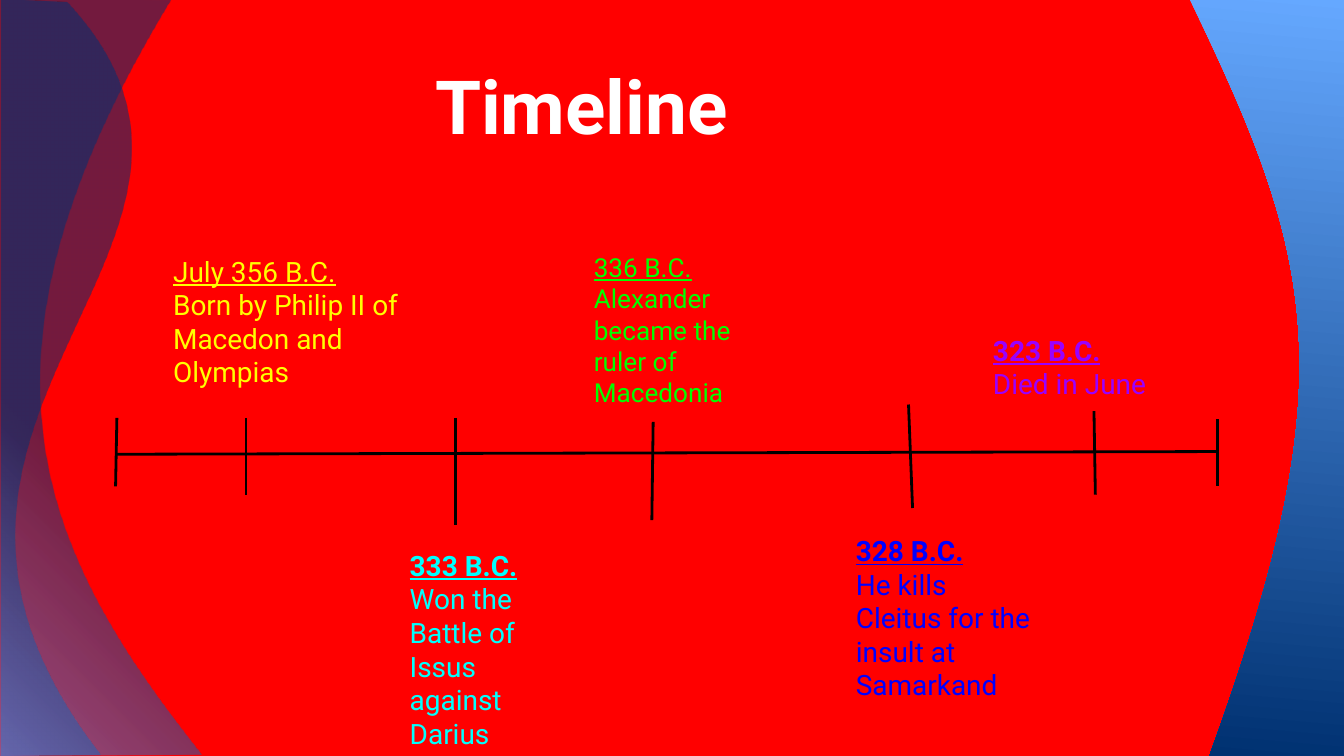
import dataclasses

import pptx
import pptx.dml.color
import pptx.enum.shapes
import pptx.enum.text
import pptx.oxml
import pptx.oxml.ns
import pptx.util
from pptx.util import Inches

Point = tuple[float, float]


@dataclasses.dataclass
class Wave:
    """A start, then steps: one point is a line, three are a curve."""
    start: Point
    steps: list[list[Point]]
    fill: str


@dataclasses.dataclass
class Event:
    left: float
    top: float
    width: float
    height: float
    date: str
    note: str
    color: str
    size: int = 15
    bold: bool = True


@dataclasses.dataclass
class Stroke:
    x1: float
    y1: float
    x2: float
    y2: float


def stop(place: int, color: str, alpha: int = 100) -> str:
    return (f'<a:gs pos="{place * 1000}"><a:srgbClr val="{color}">'
            f'<a:alpha val="{alpha * 1000}"/></a:srgbClr></a:gs>')


def blend(stops: list[str], shade: str) -> str:
    """Gradient fill as XML."""
    space = pptx.oxml.ns.nsdecls("a")
    return (f'<a:gradFill {space} rotWithShape="1"><a:gsLst>{"".join(stops)}'
            f'</a:gsLst>{shade}</a:gradFill>')


GLOW = blend(
    [stop(0, "549FFF", 54), stop(41, "003171", 54), stop(100, "003171", 54)],
    '<a:path path="circle"><a:fillToRect t="100000" r="100000"/></a:path>')
SKY = blend([stop(0, "65A8FF"), stop(100, "003171")],
            '<a:lin ang="5700000" scaled="0"/>')

WAVES = [
    Wave((1.5, 5.61), [[(-0.01, 5.62)],
                       [(-0.01, 3.74), (0, 1.86), (0, -0.02)],
                       [(1.27, 0)],
                       [(-0.38, 2.72), (0.33, 4.13), (1.5, 5.61)]], GLOW),
    Wave((0.75, 5.61), [[(0.01, 5.62)],
                        [(0.01, 3.75), (0.01, 1.88), (0.01, 0)],
                        [(0.5, 0.02)],
                        [(2.17, 1.82), (-1.22, 3.08), (0.75, 5.61)]], GLOW),
    Wave((10.05, 5.62), [[(9, 5.62)],
                         [(10.01, 2.84), (9.81, 1.96), (8.85, -0.01)],
                         [(10.05, -0.01)]], SKY),
]
STROKES = [
    Stroke(0.87, 3.38, 9.06, 3.36),
    Stroke(0.87, 3.11, 0.86, 3.62),
    Stroke(1.83, 3.11, 1.83, 3.68),
    Stroke(3.39, 3.11, 3.39, 3.91),
    Stroke(4.85, 3.87, 4.86, 3.14),
    Stroke(6.76, 3.01, 6.79, 3.78),
    Stroke(8.14, 3.06, 8.15, 3.68),
    Stroke(9.06, 3.12, 9.06, 3.62),
]
EVENTS = [
    Event(1.19, 1.79, 2.37, 1.21, "July 356 B.C.",
          "Born by Philip II of Macedon and Olympias", "FFFF00", bold=False),
    Event(4.32, 1.77, 1.53, 0.8, "336 B.C.",
          "Alexander became the ruler of Macedonia", "00FF00", 14, False),
    Event(2.95, 3.98, 1.28, 0.64, "333 B.C.",
          "Won the Battle of Issus against Darius", "00FFFF"),
    Event(6.27, 3.87, 1.53, 1.4, "328 B.C.",
          "He kills Cleitus for the insult at Samarkand", "0000FF"),
    Event(7.29, 2.38, 1.53, 0.57, "323 B.C.", "Died in June", "9900FF"),
]


def paint(fill, color: str) -> None:
    fill.solid()
    fill.fore_color.rgb = pptx.dml.color.RGBColor.from_string(color)


def style(font, size: int, color: str, bold: bool, under: bool = False) -> None:
    font.name = "Roboto"
    font.size = pptx.util.Pt(size)
    font.bold = bold
    font.underline = under
    paint(font.fill, color)


def pad(frame) -> None:
    frame.word_wrap = True
    frame.auto_size = pptx.enum.text.MSO_AUTO_SIZE.NONE
    frame.margin_left = frame.margin_right = Inches(0.1)
    frame.margin_top = frame.margin_bottom = Inches(0.1)


def place(shape, left: float, top: float, width: float, height: float) -> None:
    shape.left, shape.top = Inches(left), Inches(top)
    shape.width, shape.height = Inches(width), Inches(height)


def draw_wave(slide, wave: Wave) -> None:
    spots = [(Inches(x), Inches(y)) for step in wave.steps for x, y in step]
    pen = slide.shapes.build_freeform(*map(Inches, wave.start))
    pen.add_line_segments(spots, close=True)
    shape = pen.convert_to_shape()
    shape.shadow.inherit = False
    shape.line.fill.background()
    lines = iter(shape.element.xpath(".//a:lnTo"))
    for step in wave.steps:
        first, *rest = [next(lines) for _ in step]
        if rest:
            first.tag = pptx.oxml.ns.qn("a:cubicBezTo")
            for line in rest:
                first.append(line[0])
                line.getparent().remove(line)
    outline = shape.element.xpath(".//a:custGeom")[0]
    outline.addnext(pptx.oxml.parse_xml(wave.fill))


def draw_stroke(slide, stroke: Stroke) -> None:
    ends = map(Inches, dataclasses.astuple(stroke))
    line = slide.shapes.add_connector(
        pptx.enum.shapes.MSO_CONNECTOR.STRAIGHT, *ends)
    line.line.width = pptx.util.Pt(1.5)
    paint(line.line.fill, "000000")
    bare = f'<a:effectLst {pptx.oxml.ns.nsdecls("a")}/>'
    line.element.spPr.append(pptx.oxml.parse_xml(bare))


def draw_event(slide, event: Event) -> None:
    box = slide.shapes.add_textbox(0, 0, 0, 0)
    place(box, event.left, event.top, event.width, event.height)
    frame = box.text_frame
    pad(frame)
    frame.text = f"{event.date}\n{event.note}"
    date, note = frame.paragraphs
    style(date.font, event.size, event.color, event.bold, True)
    style(note.font, event.size, event.color, False)


def draw_title(slide) -> None:
    title = slide.shapes.title
    place(title, 0.86, 0.12, 6.93, 1.09)
    frame = title.text_frame
    pad(frame)
    frame.vertical_anchor = pptx.enum.text.MSO_ANCHOR.BOTTOM
    frame.text = "Timeline"
    line = frame.paragraphs[0]
    line.alignment = pptx.enum.text.PP_ALIGN.CENTER
    style(line.font, 40, "FFFFFF", True)


def main() -> None:
    deck = pptx.Presentation()
    deck.slide_width = Inches(10)
    deck.slide_height = Inches(10 * 9 / 16)
    slide = deck.slides.add_slide(deck.slide_layouts[5])
    paint(slide.background.fill, "FF0000")
    for wave in WAVES:
        draw_wave(slide, wave)
    draw_title(slide)
    for stroke in STROKES:
        draw_stroke(slide, stroke)
    for event in EVENTS:
        draw_event(slide, event)
    deck.save("out.pptx")


if __name__ == "__main__":
    main()
